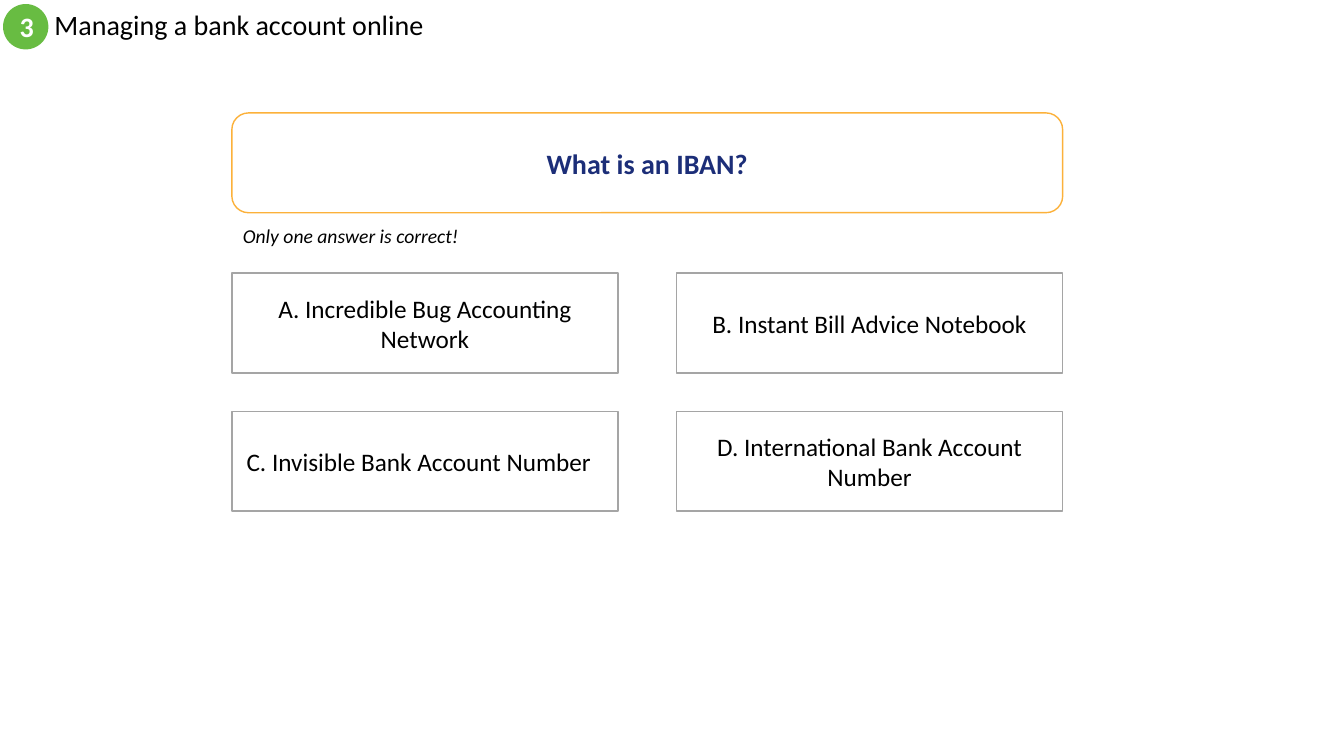
from dataclasses import dataclass

from pptx import Presentation
from pptx.dml.color import RGBColor
from pptx.enum import shapes, text
from pptx.util import Inches, Pt


@dataclass(frozen=True)
class Theme:
    font: str = "Calibri"
    black: str = "000000"
    white: str = "FFFFFF"
    navy: str = "1C2E78"
    green: str = "68BC42"
    orange: str = "FCB13A"
    grey: str = "A5A5A5"
    heading_size: int = 20
    answer_size: int = 18
    hint_size: int = 14
    outline: int = 1


THEME = Theme()
LEFT, ANSWER_TOP = 2.3, 2.71
ANSWER_WIDTH, BOX_HEIGHT = 3.83, 0.99
COLUMN_STEP, ROW_STEP = 4.41, 1.37
QUESTION_WIDTH = COLUMN_STEP + ANSWER_WIDTH

ANSWERS = [
    ("A. Incredible Bug Accounting Network", 0.1),
    ("B. Instant Bill Advice Notebook", 0.1),
    ("C. Invisible Bank Account Number", 0.22),
    ("D. International Bank Account Number", 0.1),
]


def write(frame, words, size, color, align, bold=False, italic=False):
    frame.text = words
    frame.vertical_anchor = text.MSO_ANCHOR.MIDDLE
    paragraph = frame.paragraphs[0]
    paragraph.alignment = align
    font = paragraph.runs[0].font
    font.name = THEME.font
    font.size = Pt(size)
    font.bold = bold
    font.italic = italic
    font.color.rgb = RGBColor.from_string(color)


def add_title(slide, words):
    title = slide.shapes.title
    title.left, title.top = Inches(0.44), Inches(0.04)
    title.width, title.height = Inches(8), Inches(0.45)
    write(title.text_frame, words, THEME.heading_size, THEME.black,
          text.PP_ALIGN.LEFT)
    title.text_frame.paragraphs[0].line_spacing = 0.9


def add_box(slide, kind, bounds, words, size, color, fill, line=None,
            bold=False, right_margin=0.1):
    box = slide.shapes.add_shape(kind, *map(Inches, bounds))
    box.shadow.inherit = False
    box.fill.solid()
    box.fill.fore_color.rgb = RGBColor.from_string(fill)
    if line:
        box.line.color.rgb = RGBColor.from_string(line)
        box.line.width = Pt(THEME.outline)
    else:
        box.line.fill.background()
    box.text_frame.word_wrap = True
    box.text_frame.margin_right = Inches(right_margin)
    write(box.text_frame, words, size, color, text.PP_ALIGN.CENTER, bold)


def add_hint(slide, words):
    hint = slide.shapes.add_textbox(
        Inches(2.31), Inches(2.17), Inches(2.36), Inches(0.34))
    hint.text_frame.word_wrap = False
    hint.text_frame.auto_size = text.MSO_AUTO_SIZE.SHAPE_TO_FIT_TEXT
    write(hint.text_frame, words, THEME.hint_size, THEME.black,
          text.PP_ALIGN.LEFT, italic=True)


def add_answers(slide):
    for index, (answer, right_margin) in enumerate(ANSWERS):
        row, column = divmod(index, 2)
        bounds = (LEFT + column * COLUMN_STEP, ANSWER_TOP + row * ROW_STEP,
                  ANSWER_WIDTH, BOX_HEIGHT)
        add_box(slide, shapes.MSO_SHAPE.RECTANGLE, bounds, answer,
                THEME.answer_size, THEME.black, THEME.white, THEME.grey,
                right_margin=right_margin)


def main():
    deck = Presentation()
    deck.slide_width, deck.slide_height = Inches(13.33), Inches(7.5)
    slide = deck.slides.add_slide(deck.slide_layouts.get_by_name("Title Only"))
    add_title(slide, "Managing a bank account online")
    add_box(slide, shapes.MSO_SHAPE.OVAL, (0.03, 0.04, 0.45, 0.45), "3",
            THEME.heading_size, THEME.white, THEME.green, bold=True)
    add_box(slide, shapes.MSO_SHAPE.ROUNDED_RECTANGLE,
            (LEFT, 1.12, QUESTION_WIDTH, BOX_HEIGHT), "What is an IBAN?",
            THEME.heading_size, THEME.navy, THEME.white, THEME.orange,
            bold=True)
    add_answers(slide)
    add_hint(slide, "Only one answer is correct!")
    deck.save("out.pptx")


if __name__ == "__main__":
    main()
